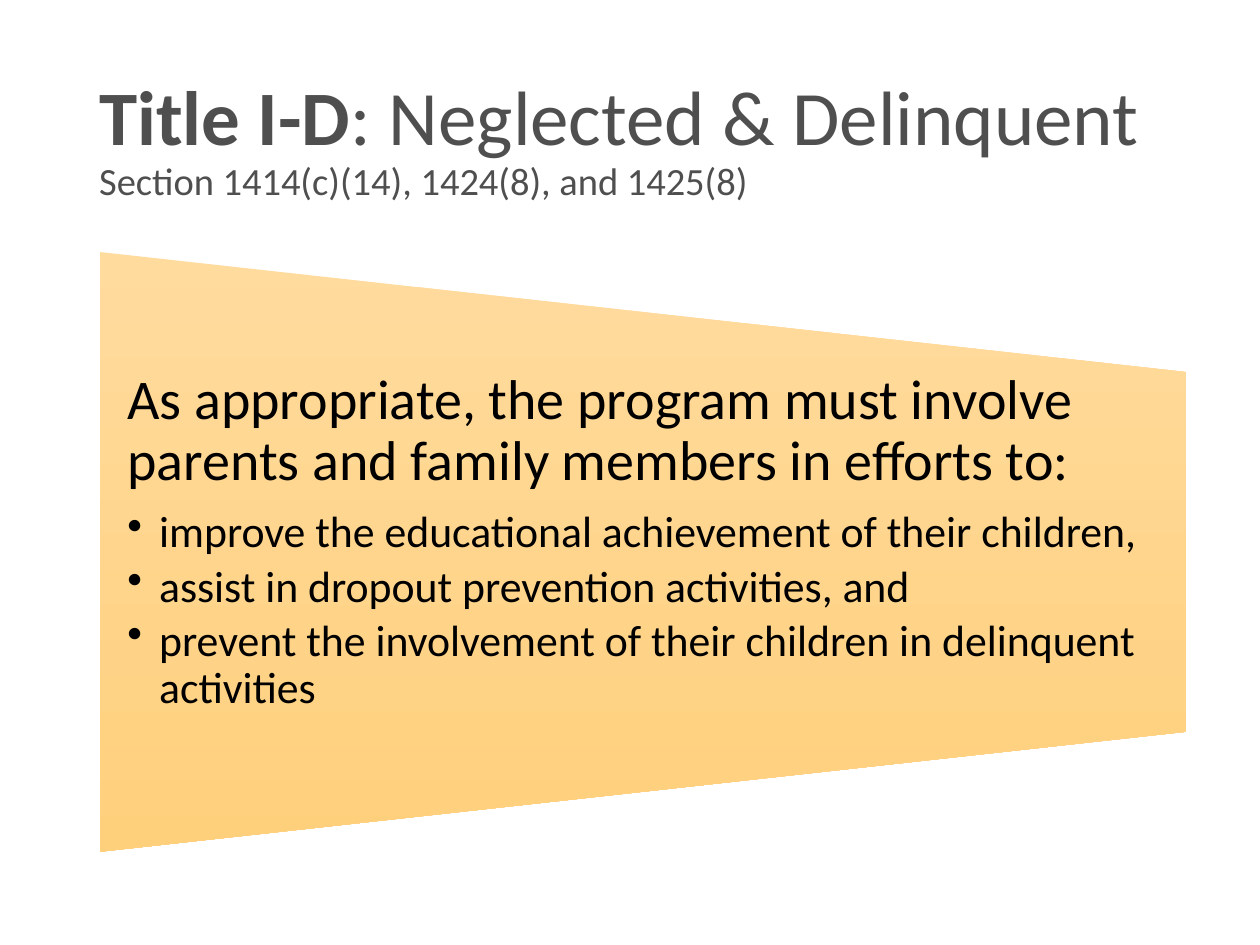
from lxml import etree
from pptx import Presentation
from pptx.dml.color import RGBColor
from pptx.enum.shapes import MSO_SHAPE
from pptx.enum.text import MSO_ANCHOR
from pptx.oxml.ns import qn
from pptx.util import Cm, Pt

FUNNEL = MSO_SHAPE.FLOWCHART_MANUAL_OPERATION
TOP, MIDDLE = MSO_ANCHOR.TOP, MSO_ANCHOR.MIDDLE
GREY = RGBColor(0x4F, 0x4F, 0x4F)
BLACK = RGBColor(0, 0, 0)
LIGHT = RGBColor(0xFF, 0xDB, 0x9E)
DEEP = RGBColor(0xFF, 0xD0, 0x7C)
FONT = "Calibri"
LEFT, WIDE = 2.01, 21.89
GOALS = [
    "improve the educational achievement of their children,",
    "assist in dropout prevention activities, and",
    "prevent the involvement of their children in delinquent activities",
]


class Page:
    def __init__(self, slide):
        self.slide = slide

    def box(self, left, top, width, height, anchor, pad):
        shape = self.slide.shapes.add_textbox(Cm(left), Cm(top), Cm(width), Cm(height))
        frame = shape.text_frame
        frame.word_wrap = True
        frame.vertical_anchor = anchor
        frame.margin_left = frame.margin_right = Cm(pad)
        frame.margin_top = frame.margin_bottom = 0
        return frame

    def para(self, para, after=0, bullet=False):
        if bullet:
            props = para._p.get_or_add_pPr()
            props.set("marL", str(Cm(0.64)))
            props.set("indent", str(-Cm(0.64)))
            etree.SubElement(props, qn("a:buChar")).set("char", "•")
        para.line_spacing = 0.9
        para.space_after = Pt(after)
        return para

    def run(self, para, text, size, color, bold=False):
        run = para.add_run()
        run.text = text
        font = run.font
        font.name, font.size, font.bold = FONT, Pt(size), bold
        font.color.rgb = color

    def funnel(self, left, top, width, height):
        shift = (width - height) / 2
        shape = self.slide.shapes.add_shape(
            FUNNEL, Cm(left + shift), Cm(top - shift), Cm(height), Cm(width))
        shape.rotation = 270
        shape.shadow.inherit = False
        shape.line.fill.background()
        fill = shape.fill
        fill.gradient()
        fill.gradient_angle = 180
        for stop, color in zip(fill.gradient_stops, (LIGHT, DEEP)):
            stop.color.rgb = color


def main():
    deck = Presentation()
    deck.slide_width, deck.slide_height = Cm(25.4), Cm(19.05)
    page = Page(deck.slides.add_slide(deck.slide_layouts[6]))

    title = page.box(1.75, 1.02, WIDE, 3.68, MIDDLE, 0.25)
    head = page.para(title.paragraphs[0])
    page.run(head, "Title I-D", 44, GREY, True)
    page.run(head, ": Neglected & Delinquent", 44, GREY)
    head.add_line_break()
    page.run(head, "Section 1414(c)(14), 1424(8), and 1425(8)", 22, GREY)

    page.funnel(LEFT, 5.08, WIDE, 12.09)
    body = page.box(LEFT, 7.49, WIDE, 7.26, TOP, 0.56)
    lead = page.para(body.paragraphs[0], 10)
    page.run(lead, "As appropriate, the program must involve parents "
             "and family members in efforts to:", 32, BLACK)
    for goal in GOALS:
        item = page.para(body.add_paragraph(), 4, True)
        page.run(item, goal, 25, BLACK)

    deck.save("out.pptx")


if __name__ == "__main__":
    main()
